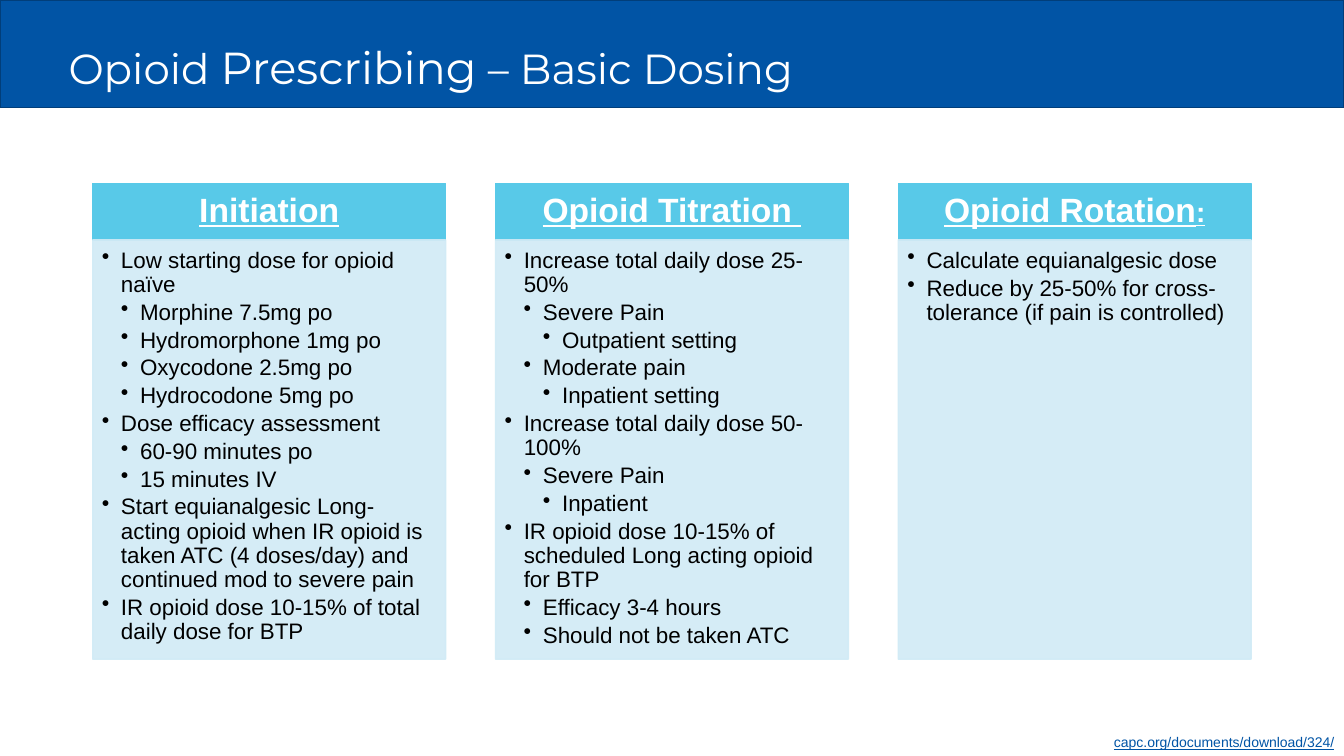
from lxml.etree import SubElement
from pptx import Presentation
from pptx.dml.color import RGBColor
from pptx.enum.shapes import MSO_SHAPE
from pptx.enum.text import MSO_ANCHOR, PP_ALIGN
from pptx.oxml.ns import qn
from pptx.util import Inches, Pt

TITLE = [("Opioid ", 30), ("Prescribing", 32), (" – Basic Dosing", 30)]
SOURCE = "capc.org/documents/download/324/"
COLUMNS = [
    ([("Initiation", 24)], [
        (1, "Low starting dose for opioid naïve"),
        (2, "Morphine 7.5mg po"),
        (2, "Hydromorphone 1mg po"),
        (2, "Oxycodone 2.5mg po"),
        (2, "Hydrocodone 5mg po"),
        (1, "Dose efficacy assessment"),
        (2, "60-90 minutes po"),
        (2, "15 minutes IV"),
        (1, "Start equianalgesic Long-acting opioid when IR opioid is taken ATC "
            "(4 doses/day) and continued mod to severe pain"),
        (1, "IR opioid dose 10-15% of total daily dose for BTP"),
    ]),
    ([("Opioid Titration ", 24)], [
        (1, "Increase total daily dose 25-50%"),
        (2, "Severe Pain"),
        (3, "Outpatient setting"),
        (2, "Moderate pain"),
        (3, "Inpatient setting"),
        (1, "Increase total daily dose 50-100%"),
        (2, "Severe Pain"),
        (3, "Inpatient"),
        (1, "IR opioid dose 10-15% of scheduled Long acting opioid for BTP"),
        (2, "Efficacy 3-4 hours"),
        (2, "Should not be taken ATC"),
    ]),
    ([("Opioid Rotation", 24), (":", 20)], [
        (1, "Calculate equianalgesic dose"),
        (1, "Reduce by 25-50% for cross-tolerance (if pain is controlled)"),
    ]),
]

SLIDE_WIDTH, SLIDE_HEIGHT = 13.33, 7.5
BLUE, NAVY, CYAN, PALE = "0154A5", "013E7A", "58C9E8", "D1EBF6"
WHITE, BLACK = "FFFFFF", "000000"
COLUMN_LEFT, COLUMN_PITCH, COLUMN_WIDTH = 0.92, 3.995, 3.5
HEADER_TOP, HEADER_HEIGHT, BODY_HEIGHT = 1.82, 0.56, 4.16
INDENT = 0.19


def color(hex_text):
    return RGBColor.from_string(hex_text)


def add_runs(paragraph, runs, font_name, hex_text, bold=False, underline=False):
    for text, size in runs:
        run = paragraph.add_run()
        run.text = text
        font = run.font
        font.name, font.size = font_name, Pt(size)
        font.bold, font.underline = bold, underline
        font.color.rgb = color(hex_text)


def add_rectangle(slide, box, fill, line, alpha=100):
    shape = slide.shapes.add_shape(MSO_SHAPE.RECTANGLE, *map(Inches, box))
    shape.shadow.inherit = False
    shape.fill.solid()
    shape.fill.fore_color.rgb = color(fill)
    shape.line.color.rgb = color(line)
    shape.line.width = Pt(1)
    if alpha < 100:
        for node in shape._element.spPr.iter(qn("a:srgbClr")):
            SubElement(node, qn("a:alpha"), val=str(alpha * 1000))
    return shape


def set_frame(frame, anchor, margins):
    frame.word_wrap = True
    frame.vertical_anchor = anchor
    (frame.margin_left, frame.margin_top,
     frame.margin_right, frame.margin_bottom) = map(Inches, margins)


def add_bullets(frame, items):
    for index, (level, text) in enumerate(items):
        paragraph = frame.add_paragraph() if index else frame.paragraphs[0]
        paragraph.level = level
        paragraph.alignment = PP_ALIGN.LEFT
        paragraph.line_spacing = 0.9
        paragraph.space_after = Pt(2.6)
        properties = paragraph._p.get_or_add_pPr()
        properties.set("marL", str(Inches(level * INDENT)))
        properties.set("indent", str(-Inches(INDENT)))
        SubElement(properties, qn("a:buChar"), char="•")
        add_runs(paragraph, [(text, 16)], "Arial", BLACK)


def add_title(slide):
    band = add_rectangle(slide, (0, 0, SLIDE_WIDTH, 1.07), BLUE, NAVY)
    slide.shapes._spTree.insert(2, band._element)
    title = slide.shapes.title
    title.left, title.top, title.width, title.height = map(Inches, (0.58, 0.34, 11.5, 0.7))
    set_frame(title.text_frame, MSO_ANCHOR.MIDDLE, (0.1, 0.05, 0.1, 0.05))
    paragraph = title.text_frame.paragraphs[0]
    paragraph.alignment = PP_ALIGN.LEFT
    paragraph.line_spacing = 0.9
    add_runs(paragraph, TITLE, "Montserrat", WHITE)


def add_column(slide, index, heading, items):
    left = COLUMN_LEFT + index * COLUMN_PITCH
    header = add_rectangle(slide, (left, HEADER_TOP, COLUMN_WIDTH, HEADER_HEIGHT), CYAN, CYAN)
    set_frame(header.text_frame, MSO_ANCHOR.MIDDLE, (0.19, 0.11, 0.19, 0.11))
    paragraph = header.text_frame.paragraphs[0]
    paragraph.alignment = PP_ALIGN.CENTER
    paragraph.line_spacing = 0.9
    add_runs(paragraph, heading, "Arial", WHITE, bold=True, underline=True)

    body_top = HEADER_TOP + HEADER_HEIGHT
    body = add_rectangle(slide, (left, body_top, COLUMN_WIDTH, BODY_HEIGHT), PALE, PALE, alpha=90)
    set_frame(body.text_frame, MSO_ANCHOR.TOP, (0.09, 0.09, 0.12, 0.14))
    add_bullets(body.text_frame, items)


def add_source(slide):
    width, height = 5.98, 0.27
    box = (SLIDE_WIDTH - width, SLIDE_HEIGHT - height, width, height)
    frame = slide.shapes.add_textbox(*map(Inches, box)).text_frame
    set_frame(frame, MSO_ANCHOR.TOP, (0.1, 0.05, 0.1, 0.05))
    paragraph = frame.paragraphs[0]
    paragraph.alignment = PP_ALIGN.RIGHT
    add_runs(paragraph, [(SOURCE, 10)], "Arial", BLUE, underline=True)


def main():
    """Build the opioid dosing slide and save it."""
    presentation = Presentation()
    presentation.slide_width = Inches(SLIDE_WIDTH)
    presentation.slide_height = Inches(SLIDE_HEIGHT)
    slide = presentation.slides.add_slide(presentation.slide_layouts[5])
    add_title(slide)
    for index, (heading, items) in enumerate(COLUMNS):
        add_column(slide, index, heading, items)
    add_source(slide)
    presentation.save("out.pptx")


if __name__ == "__main__":
    main()
